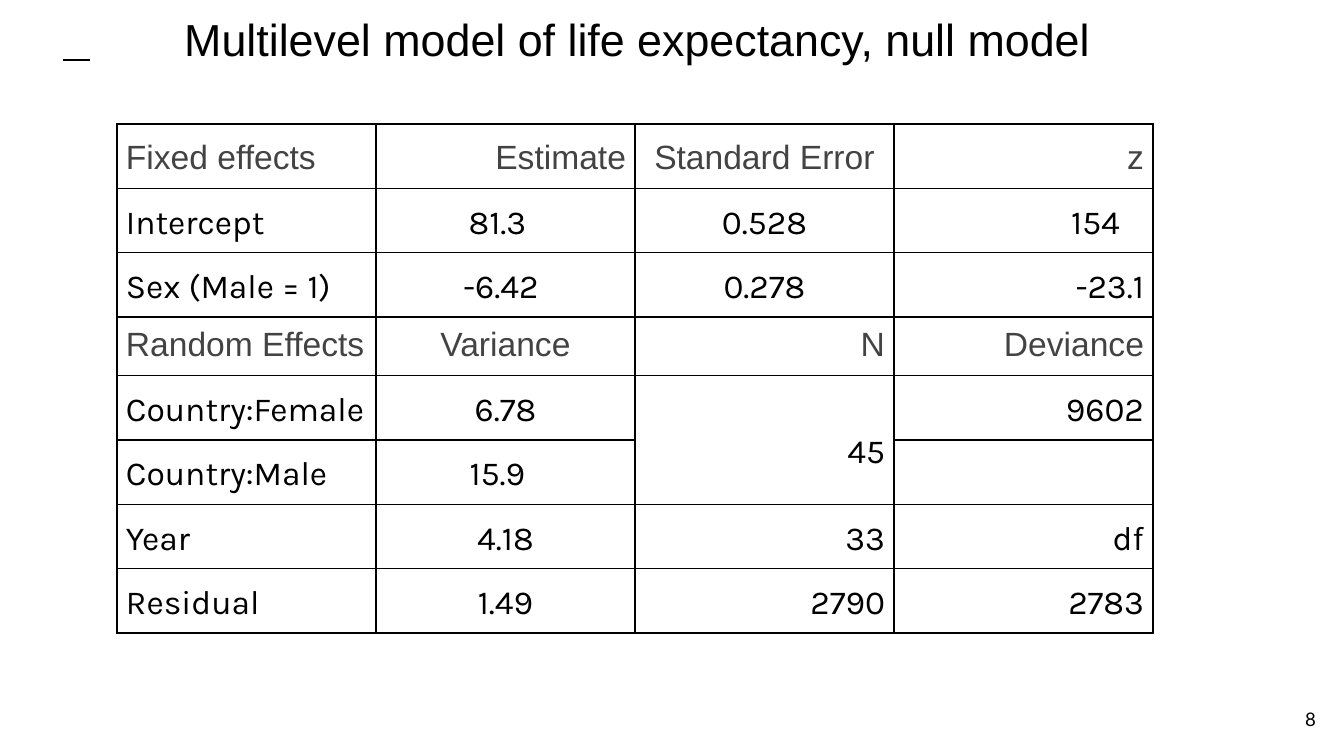
from lxml import etree
from pptx import Presentation, util as u
from pptx.dml.color import RGBColor
from pptx.enum import shapes, text
from pptx.oxml.ns import qn

PX = 6804
HUE = {"ink": "000000", "head": "434343"}
LEFT, MID, RIGHT = text.PP_ALIGN.LEFT, text.PP_ALIGN.CENTER, text.PP_ALIGN.RIGHT
PAD = 9
HEADS = (0, 3)
HEAVY = (0, 2, 7)
ROWS = [
    ["Fixed effects", "Estimate", "Standard Error", "z"],
    ["Intercept", "81.3", "0.528", "154"],
    ["Sex (Male = 1)", "-6.42", "0.278", "-23.1"],
    ["Random Effects", "Variance", "N", "Deviance"],
    ["Country:Female", "6.78", "45", "9602"],
    ["Country:Male", "15.9", "", ""],
    ["Year", "4.18", "33", "df"],
    ["Residual", "1.49", "2790", "2783"],
]
INSET = {(1, 1): 25, (1, 3): 33, (2, 1): 18, (5, 1): 25}


def px(*nums):
    return [u.Emu(n * PX) for n in nums]


def write(frame, words, font="Arial", size=18, hue="ink", align=LEFT,
          line=1.0, above=0, below=0):
    par = frame.paragraphs[0]
    par.alignment = align
    par.line_spacing = line
    par.space_before, par.space_after = u.Pt(above), u.Pt(below)
    par.font.size = u.Pt(size)
    if words:
        run = par.add_run()
        run.text = words
        run.font.name, run.font.size = font, u.Pt(size)
        run.font.color.rgb = RGBColor.from_string(HUE[hue])


def pad(obj, left, top, right, bottom):
    obj.margin_left, obj.margin_top, obj.margin_right, obj.margin_bottom = px(
        left, top, right, bottom)


def edge(cell, row):
    props = cell._tc.get_or_add_tcPr()
    for spot, side in enumerate("LRTB"):
        thick = side == "B" and row in HEAVY or side == "T" and row - 1 in HEAVY
        line = etree.Element(qn("a:ln" + side), w=str(u.Pt(1 if thick else 0.75)))
        fill = etree.SubElement(line, qn("a:solidFill"))
        etree.SubElement(fill, qn("a:srgbClr"), val=HUE["ink"])
        props.insert(spot, line)


def side(row, col):
    if col == 0:
        return LEFT
    if col == 3 or (row, col) == (0, 1):
        return RIGHT
    return RIGHT if col == 2 and row > 2 else MID


def title(slide, x, y, w, h):
    box = slide.shapes.title
    box.left, box.top, box.width, box.height = px(x, y, w, h)
    frame = box.text_frame
    frame.word_wrap = True
    frame.auto_size = text.MSO_AUTO_SIZE.SHAPE_TO_FIT_TEXT
    frame.vertical_anchor = text.MSO_ANCHOR.TOP
    pad(frame, 13, 13, 13, 13)
    write(frame, "Multilevel model of life expectancy, null model",
          size=24, align=MID, line=2.0, above=18)


def dash(slide, x, y, w):
    line = slide.shapes.add_connector(
        shapes.MSO_CONNECTOR.STRAIGHT, *px(x, y, x + w, y))
    line.line.width = u.Pt(1.5)
    line.line.color.rgb = RGBColor.from_string(HUE["ink"])
    etree.SubElement(line._element.spPr, qn("a:effectLst"))


def number(slide, x, y, w, h):
    frame = slide.shapes.add_textbox(*px(x, y, w, h)).text_frame
    frame.word_wrap = True
    frame.vertical_anchor = text.MSO_ANCHOR.MIDDLE
    pad(frame, 13, 13, 13, 13)
    write(frame, "8", font="Lato", size=10, align=RIGHT)


def grid(slide, x, y, w, h):
    table = slide.shapes.add_table(len(ROWS), 4, *px(x, y, w, h)).table
    table.first_row = table.horz_banding = False
    for r, words in enumerate(ROWS):
        for c, word in enumerate(words):
            cell = table.cell(r, c)
            cell.fill.background()
            edge(cell, r)
            pad(cell, PAD, PAD, INSET.get((r, c), PAD), PAD)
            head = r in HEADS
            write(cell.text_frame, word,
                  font="Arial" if head else "Karla",
                  hue="head" if head else "ink", align=side(r, c),
                  line=1.0 if r == 3 else 1.15,
                  above=16 if head else 0, below=4 if head else 0)
    joint = table.cell(4, 2)
    joint.merge(table.cell(5, 2))
    joint.vertical_anchor = text.MSO_ANCHOR.MIDDLE
    joint.margin_top = px(28)[0]


def main():
    deck = Presentation()
    deck.slide_width, deck.slide_height = px(1344, 756)
    slide = deck.slides.add_slide(deck.slide_layouts[5])
    dash(slide, 63, 60, 27)
    number(slide, 1249, 690, 80, 58)
    grid(slide, 117, 124, 1036, 376)
    title(slide, 106, -55, 1062, 188)
    deck.save("out.pptx")


if __name__ == "__main__":
    main()
